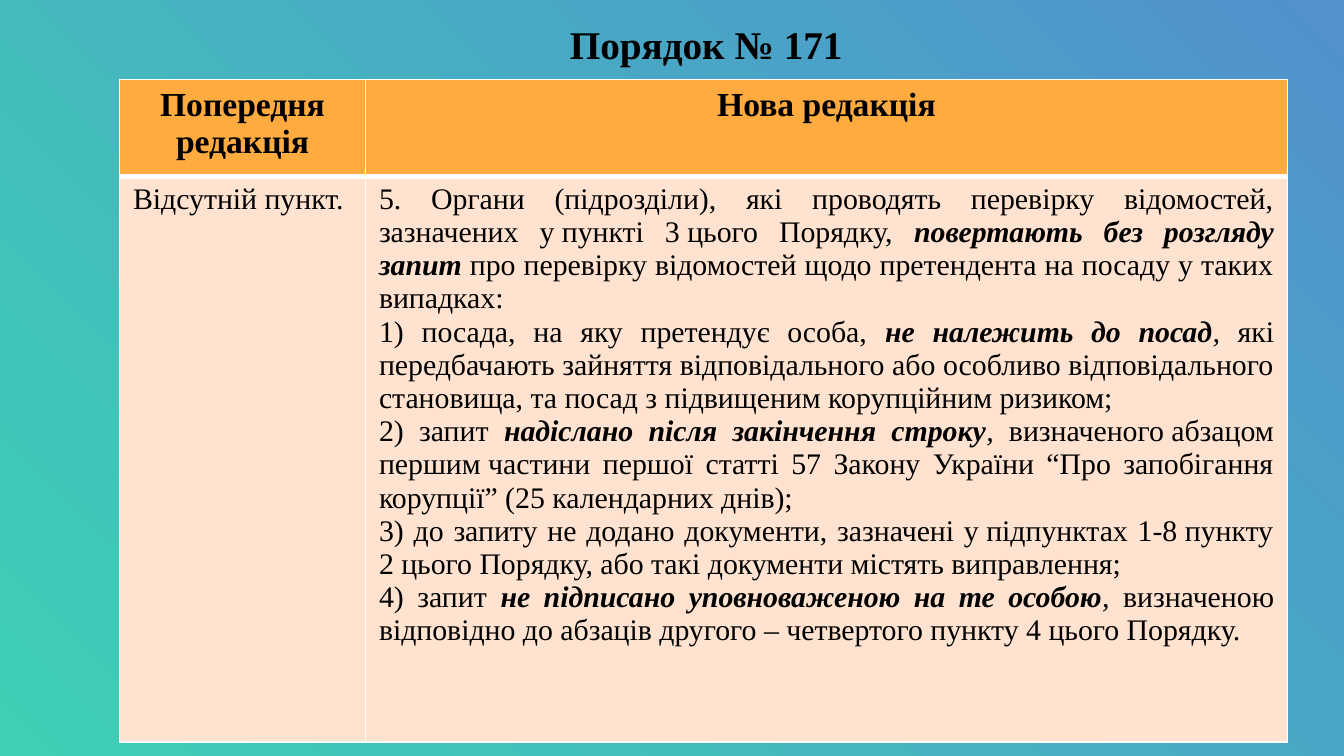
"""Builds a slide that sets the previous wording of Order No. 171 beside the new one; a tilde is a no-break space."""
from lxml import etree
from pptx import Presentation
from pptx.dml.color import RGBColor
from pptx.enum.text import MSO_ANCHOR, PP_ALIGN
from pptx.oxml import parse_xml
from pptx.oxml.ns import nsdecls, qn
from pptx.util import Inches, Pt

CENTER, LEFT, JUSTIFY = PP_ALIGN.CENTER, PP_ALIGN.LEFT, PP_ALIGN.JUSTIFY
TOP = MSO_ANCHOR.TOP
FONT = "Times New Roman"
NO_BREAK_SPACE = chr(160)
COLUMNS, ROWS = (1.83, 6.86), (0.72, 4.21)
FILLS, SIZES = ("FFAB40", "FFE2CF"), (18, 16)
BORDERS = (
    {"lnL": 1, "lnR": 1, "lnT": 1, "lnB": 3},
    {"lnL": 1, "lnR": 1, "lnT": 3, "lnB": 1},
)

CLAUSES = [
    [("5. Органи (підрозділи), які проводять перевірку відомостей, зазначених у~пункті 3~цього Порядку, ", False, False),
     ("повертають без розгляду запит ", True, True),
     ("про перевірку відомостей щодо претендента на посаду у таких випадках:", False, False)],
    [("1) посада, на яку претендує особа, ", False, False),
     ("не належить до посад", True, True),
     (", ", False, True),
     ("які передбачають зайняття відповідального або особливо відповідального становища, "
      "та посад з підвищеним корупційним ризиком;", False, False)],
    [("2) запит ", False, False),
     ("надіслано після закінчення строку", True, True),
     (",", False, True),
     (" визначеного~абзацом першим~частини першої статті 57 Закону України "
      "“Про запобігання корупції” (25 календарних днів);", False, False)],
    [("3) до запиту не додано документи, зазначені у~підпунктах 1-8~пункту 2 цього Порядку, "
      "або такі документи містять виправлення;", False, False)],
    [("4) запит ", False, False),
     ("не підписано уповноваженою на те особою", True, True),
     (", ", False, True),
     ("визначеною відповідно до~абзаців~другого – четвертого~пункту 4 цього Порядку.", False, False)],
]
CELLS = [
    [(CENTER, [[("Попередня редакція", True, False)]]), (CENTER, [[("Нова редакція", True, False)]])],
    [(LEFT, [[("Відсутній пункт.", False, False)]]), (JUSTIFY, CLAUSES)],
]


def color(value):
    return RGBColor.from_string(value)


def write(frame, paragraphs, size, alignment):
    for index, runs in enumerate(paragraphs):
        para = frame.add_paragraph() if index else frame.paragraphs[0]
        para.alignment = alignment
        for text, bold, italic in runs:
            span = para.add_run()
            span.text = text.replace("~", NO_BREAK_SPACE)
            span.font.name, span.font.size = FONT, Pt(size)
            span.font.bold, span.font.italic = bold, italic
            span.font.color.rgb = color("000000")


deck = Presentation()
deck.slide_width, deck.slide_height = Inches(10), Inches(10) * 9 // 16
page = deck.slides.add_slide(deck.slide_layouts[5])

page.background.fill.solid()
solid = page.background.fill._xPr.find(qn("a:solidFill"))
gradient = parse_xml(
    f'<a:gradFill {nsdecls("a")} rotWithShape="1"><a:gsLst>'
    '<a:gs pos="0"><a:srgbClr val="3DD0B4"/></a:gs>'
    '<a:gs pos="100000"><a:srgbClr val="5091CE"/></a:gs></a:gsLst>'
    '<a:path path="circle"><a:fillToRect t="100000" r="100000"/></a:path></a:gradFill>'
)
solid.getparent().replace(solid, gradient)

title = page.shapes.title
title.left, title.top, title.width, title.height = (Inches(n) for n in (0.24, 0, 9.53, 1.19))
frame = title.text_frame
frame.margin_left = frame.margin_right = frame.margin_top = frame.margin_bottom = Inches(0.1)
frame.vertical_anchor = TOP
write(frame, [[("Порядок № 171", True, False)]], 21, CENTER)
heading = frame.paragraphs[0]
heading.line_spacing, heading.space_after = 1.15, Pt(8)
indents = heading._p.get_or_add_pPr()
indents.set("marL", "0")
indents.set("indent", str(Inches(0.5)))

table = page.shapes.add_table(
    len(ROWS), len(COLUMNS), Inches(0.89), Inches(0.59), Inches(sum(COLUMNS)), Inches(sum(ROWS))
).table
for column, width in zip(table.columns, COLUMNS):
    column.width = Inches(width)
for row, height, fill, size, borders, contents in zip(table.rows, ROWS, FILLS, SIZES, BORDERS, CELLS):
    row.height = Inches(height)
    for cell, (alignment, paragraphs) in zip(row.cells, contents):
        write(cell.text_frame, paragraphs, size, alignment)
        cell.vertical_anchor = TOP
        properties = cell._tc.get_or_add_tcPr()
        for side, weight in borders.items():
            line = etree.SubElement(properties, qn(f"a:{side}"), w=str(Pt(weight)))
            paint = etree.SubElement(line, qn("a:solidFill"))
            etree.SubElement(paint, qn("a:srgbClr"), val="FFFFFF")
        cell.fill.solid()
        cell.fill.fore_color.rgb = color(fill)

deck.save("out.pptx")
